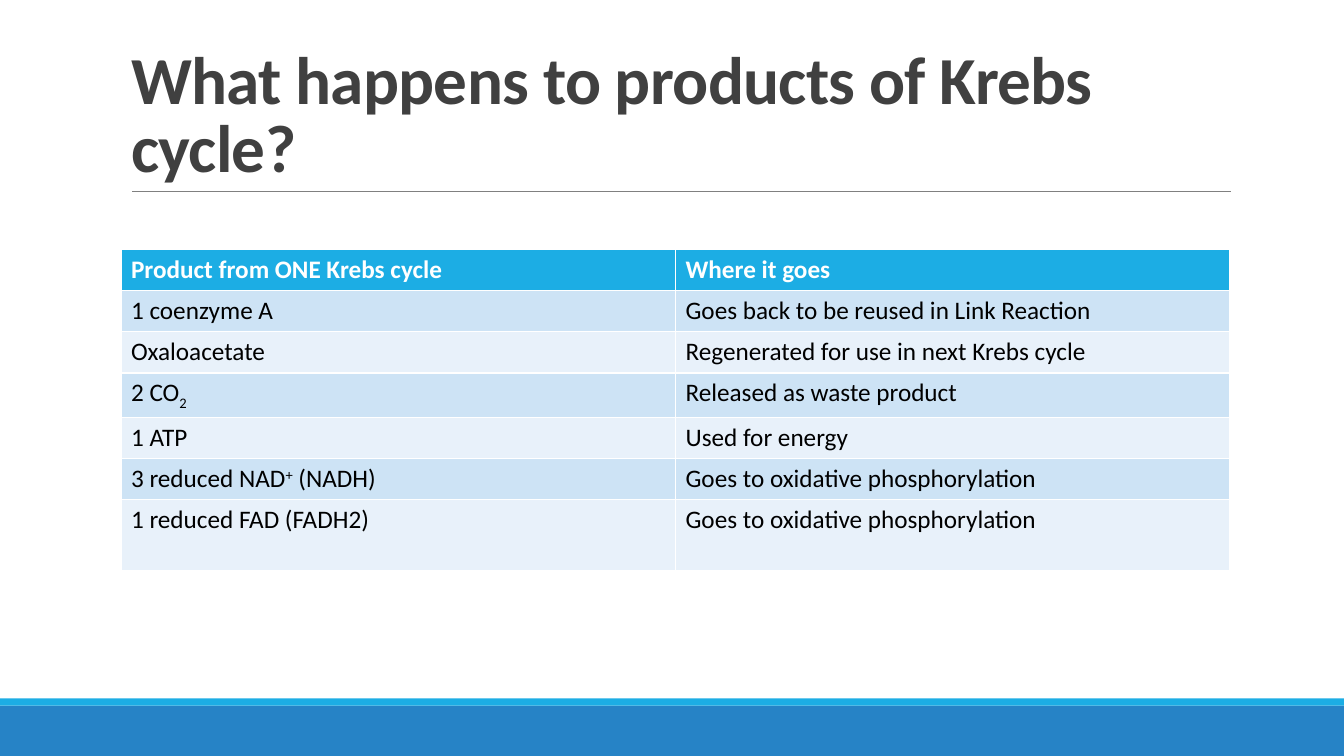
from pptx import Presentation
from pptx.dml.color import RGBColor
from pptx.enum.shapes import MSO_CONNECTOR, MSO_SHAPE
from pptx.enum.text import MSO_ANCHOR, MSO_AUTO_SIZE, PP_ALIGN
from pptx.oxml.ns import qn
from pptx.util import Inches, Pt

STRAIGHT = MSO_CONNECTOR.STRAIGHT
RECTANGLE = MSO_SHAPE.RECTANGLE
BOTTOM = MSO_ANCHOR.BOTTOM
NO_AUTOFIT = MSO_AUTO_SIZE.NONE
LEFT = PP_ALIGN.LEFT

WIDTH, HEIGHT = Inches(13.33), Inches(7.5)
MARGIN, CONTENT_WIDTH = Inches(1.2), Inches(11)
ROW_HEIGHT, LAST_ROW_HEIGHT = Inches(0.41), Inches(0.7)
FONT = "Calibri"
SUBSCRIPT, SUPERSCRIPT = "-25000", "30000"

BLUE = RGBColor(0x26, 0x83, 0xC6)
CYAN = RGBColor(0x1C, 0xAD, 0xE4)
GRAY = RGBColor(0x80, 0x80, 0x80)
DARK_GRAY = RGBColor(0x40, 0x40, 0x40)
WHITE = RGBColor(0xFF, 0xFF, 0xFF)
BLACK = RGBColor(0, 0, 0)
BANDS = (RGBColor(0xE8, 0xF1, 0xFA), RGBColor(0xCD, 0xE3, 0xF5))

PRODUCTS = [
    ("Product from ONE Krebs cycle", "Where it goes"),
    ("1 coenzyme A", "Goes back to be reused in Link Reaction"),
    ("Oxaloacetate", "Regenerated for use in next Krebs cycle"),
    (["2 CO", ("2", SUBSCRIPT)], "Released as waste product"),
    ("1 ATP", "Used for energy"),
    (["3 reduced NAD", ("+", SUPERSCRIPT), " (NADH)"], "Goes to oxidative phosphorylation"),
    ("1 reduced FAD (FADH2)", "Goes to oxidative phosphorylation"),
]


def set_font(paragraph, size, color, bold):
    """Format a whole paragraph."""
    font = paragraph.font
    font.name, font.size, font.bold = FONT, Pt(size), bold
    font.color.rgb = color


def add_band(slide, top, height, color):
    """Draw a full-width footer band."""
    band = slide.shapes.add_shape(RECTANGLE, 0, top, WIDTH, height)
    band.shadow.inherit = False
    band.fill.solid()
    band.fill.fore_color.rgb = color
    band.line.fill.background()


def add_rule(slide, left, right, top):
    """Draw the thin line under the title."""
    rule = slide.shapes.add_connector(STRAIGHT, left, top, right, top)
    rule.line.color.rgb = GRAY
    rule.line.width = Pt(0.5)
    properties = rule._element.spPr
    properties.append(properties.makeelement(qn("a:effectLst"), {}))


def fill_title(slide, text):
    """Place and format the title placeholder."""
    title = slide.shapes.title
    title.left, title.top = MARGIN, Inches(0.31)
    title.width, title.height = CONTENT_WIDTH, Inches(1.59)
    frame = title.text_frame
    frame.text = text
    frame.word_wrap = True
    frame.auto_size = NO_AUTOFIT
    frame.vertical_anchor = BOTTOM
    paragraph = frame.paragraphs[0]
    paragraph.alignment = LEFT
    paragraph.line_spacing = 0.85
    set_font(paragraph, 48, DARK_GRAY, True)
    paragraph.runs[0].font._element.set("spc", "-50")


def fill_cell(cell, content, fill, color, bold):
    """Fill a cell with text whose parts may be raised or lowered."""
    cell.fill.solid()
    cell.fill.fore_color.rgb = fill
    paragraph = cell.text_frame.paragraphs[0]
    set_font(paragraph, 18, color, bold)
    for part in [content] if isinstance(content, str) else content:
        text, baseline = (part, None) if isinstance(part, str) else part
        run = paragraph.add_run()
        run.text = text
        if baseline:
            run.font._element.set("baseline", baseline)


def add_products_table(slide, rows):
    """Add the banded table with a coloured header row."""
    shape = slide.shapes.add_table(
        len(rows), len(rows[0]), MARGIN, Inches(2.47), CONTENT_WIDTH, ROW_HEIGHT * len(rows)
    )
    table = shape.table
    for row_index, contents in enumerate(rows):
        header = row_index == 0
        table.rows[row_index].height = ROW_HEIGHT
        fill = CYAN if header else BANDS[row_index % 2]
        for column_index, content in enumerate(contents):
            cell = table.cell(row_index, column_index)
            fill_cell(cell, content, fill, WHITE if header else BLACK, header)
    table.rows[len(rows) - 1].height = LAST_ROW_HEIGHT


def main():
    """Build and save the slide."""
    presentation = Presentation()
    presentation.slide_width, presentation.slide_height = WIDTH, HEIGHT
    slide = presentation.slides.add_slide(presentation.slide_layouts[5])
    add_band(slide, Inches(7), Inches(0.5), BLUE)
    add_band(slide, Inches(6.93), Inches(0.07), CYAN)
    add_rule(slide, Inches(1.31), Inches(12.21), Inches(1.9))
    fill_title(slide, "What happens to products of Krebs cycle?")
    add_products_table(slide, PRODUCTS)
    presentation.save("out.pptx")


if __name__ == "__main__":
    main()
